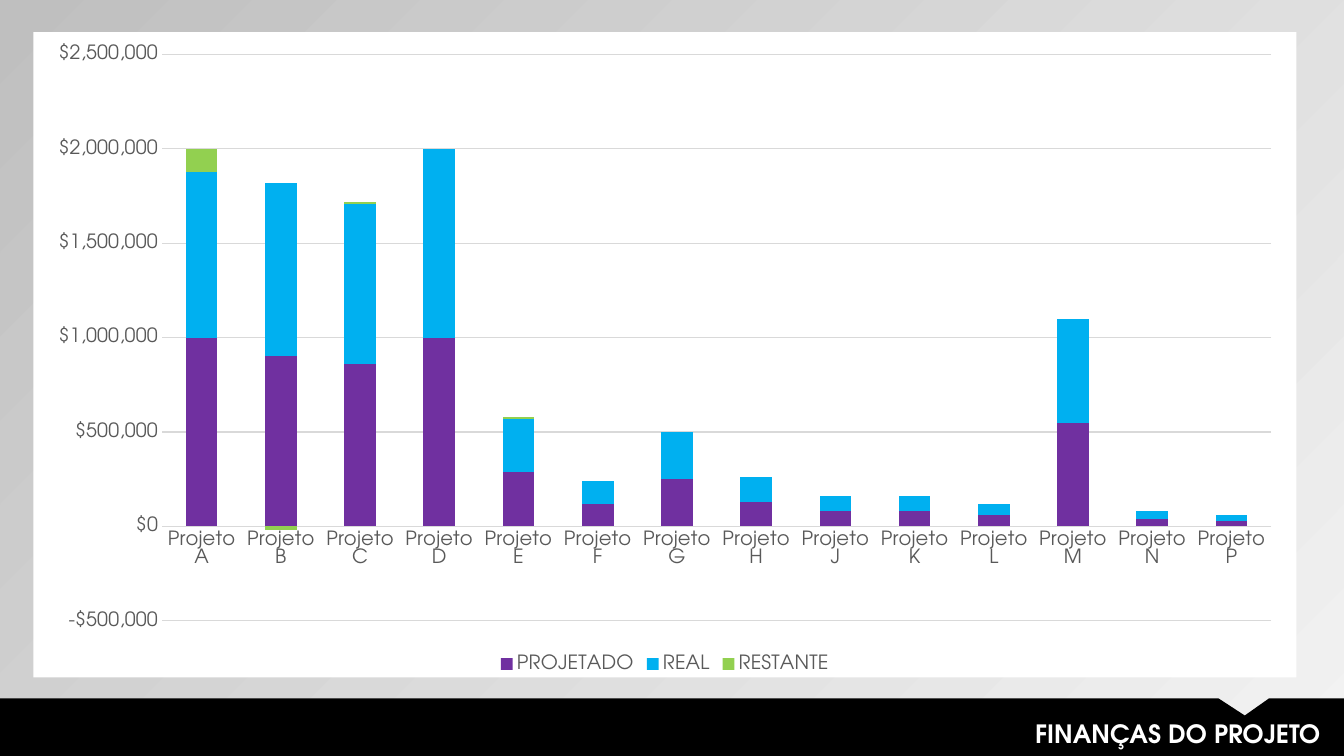
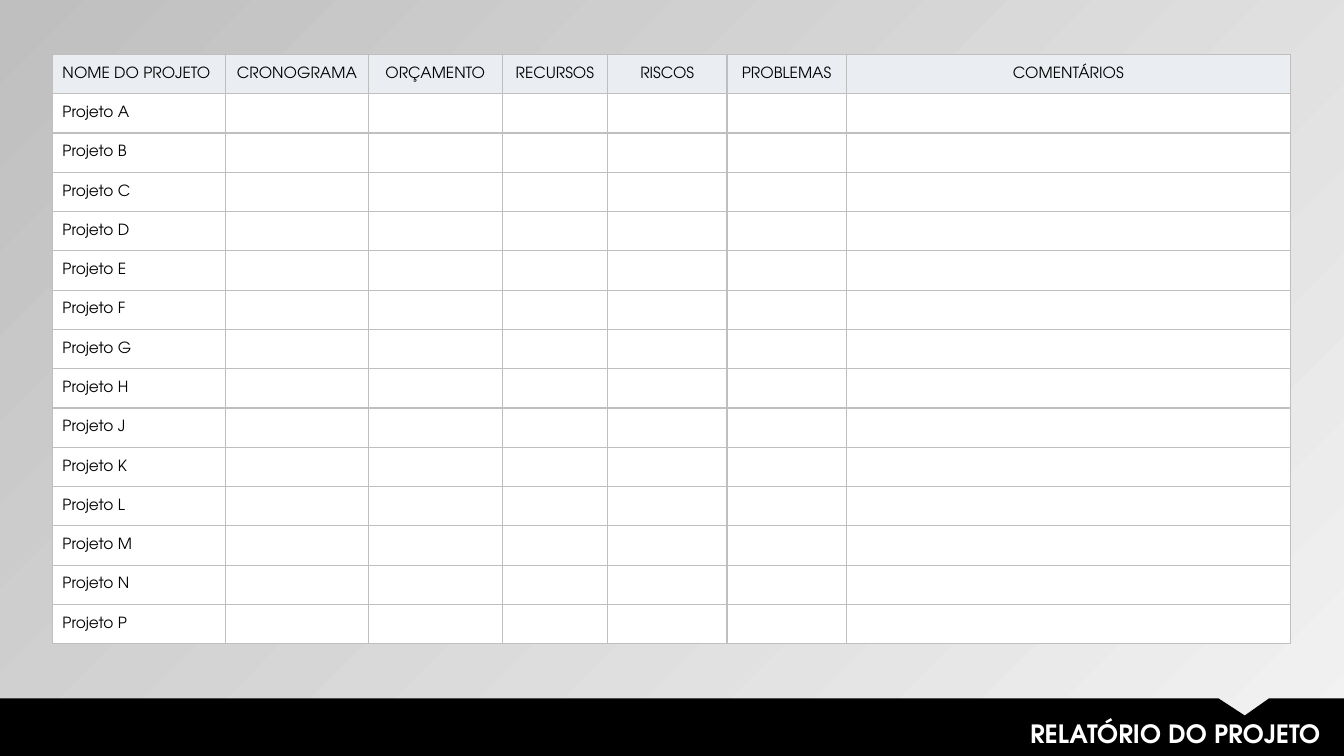
"""Build two project slides: a finance chart and a status report table."""
from lxml import etree
from pptx import Presentation
from pptx.chart.data import CategoryChartData
from pptx.dml.color import RGBColor
from pptx.enum import chart as ch, text
from pptx.oxml import parse_xml
from pptx.oxml.ns import nsdecls, qn
from pptx.util import Cm, Pt

FONT = "TeX Gyre Adventor"
BLACK = RGBColor(0x00, 0x00, 0x00)
WHITE = RGBColor(0xFF, 0xFF, 0xFF)
LIGHT = RGBColor(0xF2, 0xF2, 0xF2)
SILVER = RGBColor(0xBF, 0xBF, 0xBF)
GRID = RGBColor(0xD9, 0xD9, 0xD9)
LABEL = RGBColor(0x59, 0x59, 0x59)
HEADER = RGBColor(0xEA, 0xEE, 0xF3)
PURPLE = RGBColor(0x70, 0x30, 0xA0)
BLUE = RGBColor(0x00, 0xB0, 0xF0)
GREEN = RGBColor(0x92, 0xD0, 0x50)

WIDTH, HEIGHT = 33.87, 19.05
BAND_TOP = 17.6
NOTCH = [(30.71, BAND_TOP), (31.37, 18.03), (31.98, BAND_TOP)]

PROJECTS = [f"Projeto {letter}" for letter in "ABCDEFGHJKLMNP"]
SMALL = [120, 250, 130, 80, 80, 60, 550, 40, 30]
SERIES = [
    ("PROJETADO", PURPLE, [1000, 900, 860, 1000, 290] + SMALL),
    ("REAL", BLUE, [880, 920, 850, 1000, 280] + SMALL),
    ("RESTANTE", GREEN, [120, -20, 10, 0, 10] + [0] * len(SMALL)),
]
COLUMNS = [
    ("NOME DO PROJETO", 4.37), ("CRONOGRAMA", 3.59), ("ORÇAMENTO", 3.38),
    ("RECURSOS", 2.65), ("RISCOS", 3.01), ("PROBLEMAS", 3.01),
    ("COMENTÁRIOS", 11.19),
]
ROW_HEIGHT = 0.99


def set_font(font, size, color, bold=False):
    font.name, font.size, font.bold = FONT, Pt(size), bold
    font.color.rgb = color


def set_background(master):
    fill = master.background.fill
    fill.gradient()
    fill.gradient_angle = 135
    for stop, color in zip(fill.gradient_stops, (LIGHT, SILVER)):
        stop.color.rgb = color


def add_slide(prs, title):
    s = prs.slides.add_slide(prs.slide_layouts[5])
    builder = s.shapes.build_freeform(Cm(0), Cm(BAND_TOP))
    corners = NOTCH + [(WIDTH, BAND_TOP), (WIDTH, HEIGHT), (0, HEIGHT)]
    builder.add_line_segments([(Cm(x), Cm(y)) for x, y in corners], close=True)
    band = builder.convert_to_shape()
    band.shadow.inherit = False
    band.fill.solid()
    band.fill.fore_color.rgb = BLACK
    band.line.fill.background()

    sp = s.shapes.title
    band._element.addnext(sp._element)
    sp.left, sp.top, sp.width, sp.height = Cm(10.52), Cm(17.98), Cm(23.01), Cm(1.02)
    tf = sp.text_frame
    tf.text = title
    tf.vertical_anchor = text.MSO_ANCHOR.TOP
    tf.auto_size = text.MSO_AUTO_SIZE.NONE
    p = tf.paragraphs[0]
    p.alignment = text.PP_ALIGN.RIGHT
    set_font(p.font, 18, WHITE, True)
    return s


def add_finance_chart(s):
    data = CategoryChartData(number_format='"$"#,##0')
    data.categories = PROJECTS
    for name, _, thousands in SERIES:
        data.add_series(name, [v * 1000 for v in thousands])
    chart = s.shapes.add_chart(ch.XL_CHART_TYPE.COLUMN_STACKED, Cm(0.84), Cm(0.81),
                               Cm(31.83), Cm(16.26), data).chart
    chart.has_title = False
    set_font(chart.font, 14, LABEL)
    chart.has_legend = True
    chart.legend.position = ch.XL_LEGEND_POSITION.BOTTOM
    chart.legend.include_in_layout = False
    set_font(chart.legend.font, 14, LABEL)

    plot = chart.plots[0]
    plot.gap_width, plot.overlap, plot.vary_by_categories = 150, 100, False
    for series, (_, color, _) in zip(plot.series, SERIES):
        series.invert_if_negative = False
        series.format.fill.solid()
        series.format.fill.fore_color.rgb = color

    cat, val = chart.category_axis, chart.value_axis
    for axis in (cat, val):
        axis.major_tick_mark = axis.minor_tick_mark = ch.XL_TICK_MARK.NONE
        set_font(axis.tick_labels.font, 14, LABEL)
    val.minimum_scale, val.maximum_scale, val.major_unit = -500000, 2500000, 500000
    val.tick_labels.number_format = '"$"#,##0'
    val.tick_labels.number_format_is_linked = False
    val.format.line.fill.background()
    for line in (cat.format.line, val.major_gridlines.format.line):
        line.color.rgb = GRID
        line.width = Pt(0.75)

    chart._chartSpace.find(qn("c:chart")).addnext(parse_xml(
        f'<c:spPr {nsdecls("c", "a")}><a:solidFill><a:srgbClr val="{WHITE}"/>'
        '</a:solidFill><a:ln><a:noFill/></a:ln></c:spPr>'))


def add_borders(cell):
    tc_pr = cell._tc.get_or_add_tcPr()
    for side in "LRTB":
        ln = etree.SubElement(tc_pr, qn(f"a:ln{side}"), w=str(Pt(1)))
        fill = etree.SubElement(ln, qn("a:solidFill"))
        etree.SubElement(fill, qn("a:srgbClr"), val=str(SILVER))


def add_report_table(s):
    rows = [[name for name, _ in COLUMNS]]
    rows += [[project] + [""] * (len(COLUMNS) - 1) for project in PROJECTS]
    total = sum(width for _, width in COLUMNS)
    table = s.shapes.add_table(len(rows), len(COLUMNS), Cm(1.32), Cm(1.37),
                               Cm(total), Cm(ROW_HEIGHT * len(rows))).table
    table.first_row = table.horz_banding = False
    for column, (_, width) in zip(table.columns, COLUMNS):
        column.width = Cm(width)
    for i, row in enumerate(rows):
        table.rows[i].height = Cm(ROW_HEIGHT)
        for j, value in enumerate(row):
            cell = table.cell(i, j)
            add_borders(cell)
            cell.fill.solid()
            cell.fill.fore_color.rgb = WHITE if i else HEADER
            cell.vertical_anchor = text.MSO_ANCHOR.MIDDLE
            cell.margin_top = cell.margin_bottom = 0
            cell.text = value
            p = cell.text_frame.paragraphs[0]
            p.alignment = text.PP_ALIGN.CENTER if j else text.PP_ALIGN.LEFT
            set_font(p.font, 11, BLACK)


def main():
    prs = Presentation()
    prs.slide_width, prs.slide_height = Cm(WIDTH), Cm(HEIGHT)
    set_background(prs.slide_master)
    add_finance_chart(add_slide(prs, "FINANÇAS DO PROJETO"))
    add_report_table(add_slide(prs, "RELATÓRIO DO PROJETO"))
    prs.save("out.pptx")


if __name__ == "__main__":
    main()
